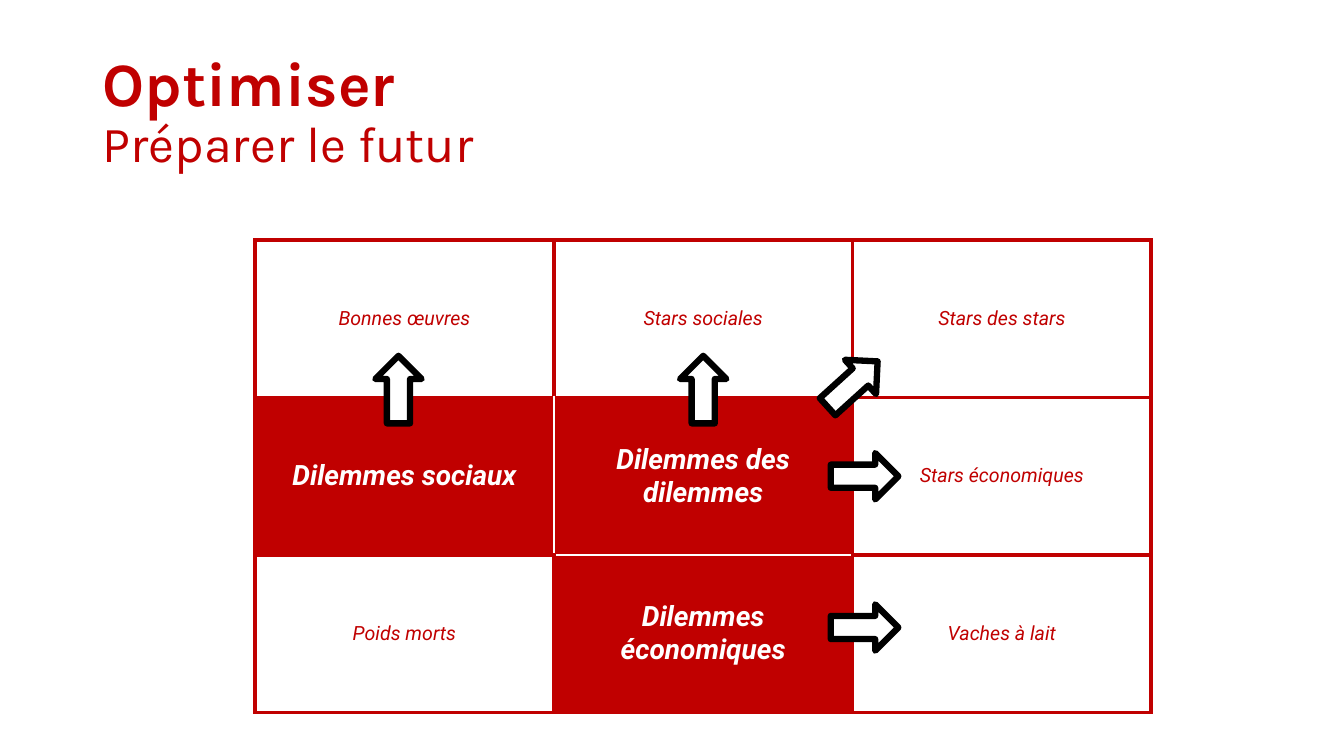
from dataclasses import dataclass

from lxml import etree
from pptx import Presentation
from pptx import util as u
from pptx.dml.color import RGBColor
from pptx.enum import shapes, text
from pptx.oxml import ns


@dataclass(frozen=True)
class Theme:
    red: str = "C00000"
    white: str = "FFFFFF"
    black: str = "000000"
    heading_font: str = "Karla"
    body_font: str = "Roboto"
    heading_size: float = 44
    subheading_size: float = 36
    dilemma_size: float = 20
    category_size: float = 14
    border: float = 3
    inner_border: float = 1.5
    arrow_line: float = 4.5


@dataclass(frozen=True)
class Category:
    label: str
    dilemma: bool = False


@dataclass(frozen=True)
class Move:
    """An arrow centred at a point given in matrix columns and rows."""
    column: float
    row: float
    rotation: float = 0


THEME = Theme()

# Matrix grid, in inches
LEFT, TOP = 2.53, 2.38
COLUMN, ROW = 8.89 / 3, 4.69 / 3
ARROW_WIDTH, ARROW_HEIGHT = 0.67, 0.46

MATRIX = [
    [Category("Bonnes œuvres"), Category("Stars sociales"), Category("Stars des stars")],
    [Category("Dilemmes sociaux", True), Category("Dilemmes des dilemmes", True),
     Category("Stars économiques")],
    [Category("Poids morts"), Category("Dilemmes économiques", True),
     Category("Vaches à lait")],
]

MOVES = [
    Move(2.04, 2.46),
    Move(0.48, 0.95, 270),
    Move(2.04, 1.5),
    Move(1.5, 0.95, 270),
    Move(2, 0.915, 317.8),
]

# Border tags in schema order, with the neighbour each one faces (row, column)
SIDES = {"a:lnL": (0, -1), "a:lnR": (0, 1), "a:lnT": (-1, 0), "a:lnB": (1, 0)}


def add_run(paragraph, wording: str, font: str, size: float, color: str,
            bold: bool = False, italic: bool = False) -> None:
    run = paragraph.add_run()
    run.text = wording
    run.font.name = font
    run.font.size = u.Pt(size)
    run.font.bold = bold
    run.font.italic = italic
    run.font.color.rgb = RGBColor.from_string(color)


def add_heading(slide) -> None:
    heading = slide.shapes.title
    heading.left, heading.top = u.Inches(0.92), u.Inches(0.4)
    heading.width, heading.height = u.Inches(11.5), u.Inches(1.45)
    frame = heading.text_frame
    frame.word_wrap = True
    frame.auto_size = text.MSO_AUTO_SIZE.NONE
    frame.vertical_anchor = text.MSO_ANCHOR.MIDDLE
    lines = [("Optimiser", THEME.heading_size, True),
             ("Préparer le futur", THEME.subheading_size, False)]
    for index, (wording, size, bold) in enumerate(lines):
        paragraph = frame.add_paragraph() if index else frame.paragraphs[0]
        paragraph.alignment = text.PP_ALIGN.LEFT
        paragraph.line_spacing = 0.9
        add_run(paragraph, wording, THEME.heading_font, size, THEME.red, bold)


def is_dilemma(row: int, column: int) -> bool:
    return 0 <= row < 3 and 0 <= column < 3 and MATRIX[row][column].dilemma


def set_borders(cell, row: int, column: int) -> None:
    """Thin white between two dilemmas, thick red everywhere else."""
    properties = cell._tc.get_or_add_tcPr()
    for position, (tag, (down, across)) in enumerate(SIDES.items()):
        inner = is_dilemma(row, column) and is_dilemma(row + down, column + across)
        width = THEME.inner_border if inner else THEME.border
        line = etree.Element(ns.qn(tag), w=str(u.Pt(width)))
        fill = etree.SubElement(line, ns.qn("a:solidFill"))
        etree.SubElement(fill, ns.qn("a:srgbClr"), val=THEME.white if inner else THEME.red)
        properties.insert(position, line)


def fill_cell(cell, category: Category) -> None:
    background, ink, size = (
        (THEME.red, THEME.white, THEME.dilemma_size) if category.dilemma
        else (THEME.white, THEME.red, THEME.category_size))
    cell.fill.solid()
    cell.fill.fore_color.rgb = RGBColor.from_string(background)
    cell.vertical_anchor = text.MSO_ANCHOR.MIDDLE
    cell.margin_left = cell.margin_right = u.Inches(0.31)
    cell.margin_top = cell.margin_bottom = u.Inches(0.05)
    paragraph = cell.text_frame.paragraphs[0]
    paragraph.alignment = text.PP_ALIGN.CENTER
    add_run(paragraph, category.label, THEME.body_font, size, ink,
            bold=category.dilemma, italic=True)


def add_matrix(slide) -> None:
    matrix = slide.shapes.add_table(
        3, 3, u.Inches(LEFT), u.Inches(TOP),
        u.Inches(3 * COLUMN), u.Inches(3 * ROW)).table
    matrix.first_row = matrix.horz_banding = False
    for row, categories in enumerate(MATRIX):
        for column, category in enumerate(categories):
            cell = matrix.cell(row, column)
            fill_cell(cell, category)
            set_borders(cell, row, column)


def add_move(slide, move: Move) -> None:
    arrow = slide.shapes.add_shape(
        shapes.MSO_SHAPE.RIGHT_ARROW,
        u.Inches(LEFT + move.column * COLUMN - ARROW_WIDTH / 2),
        u.Inches(TOP + move.row * ROW - ARROW_HEIGHT / 2),
        u.Inches(ARROW_WIDTH), u.Inches(ARROW_HEIGHT))
    arrow.rotation = move.rotation
    arrow.shadow.inherit = False
    arrow.fill.solid()
    arrow.fill.fore_color.rgb = RGBColor.from_string(THEME.white)
    arrow.line.color.rgb = RGBColor.from_string(THEME.black)
    arrow.line.width = u.Pt(THEME.arrow_line)


def main() -> None:
    deck = Presentation()
    deck.slide_width, deck.slide_height = u.Inches(13.33), u.Inches(7.5)
    slide = deck.slides.add_slide(deck.slide_layouts.get_by_name("Title Only"))

    # Heading
    add_heading(slide)

    # Matrix of categories
    add_matrix(slide)

    # Moves out of the dilemmas
    for move in MOVES:
        add_move(slide, move)

    deck.save("out.pptx")


if __name__ == "__main__":
    main()
